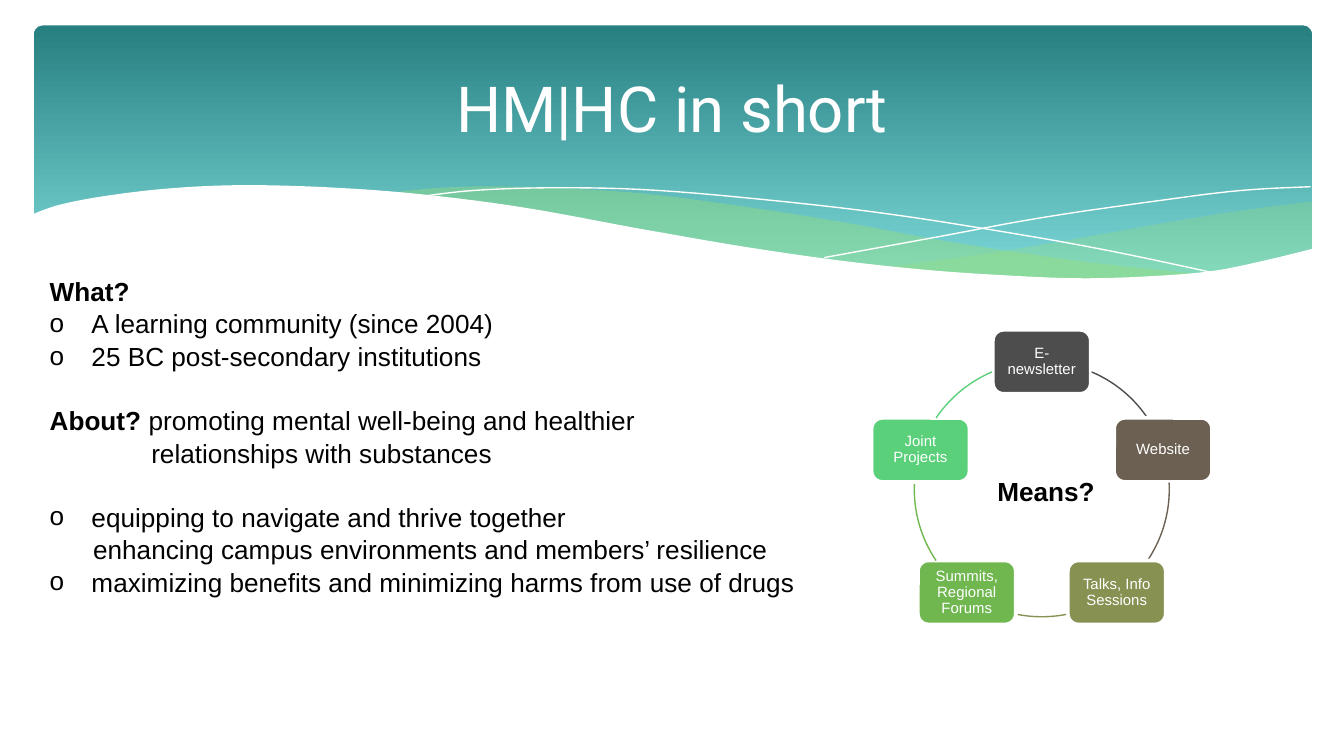
from math import cos, radians, sin
from typing import NamedTuple

from lxml import etree
from pptx import Presentation
from pptx.dml.color import RGBColor
from pptx.enum.shapes import MSO_SHAPE
from pptx.enum.text import MSO_ANCHOR, PP_ALIGN
from pptx.oxml.ns import qn
from pptx.util import Cm, Pt

ROUNDED = MSO_SHAPE.ROUNDED_RECTANGLE
ARC = MSO_SHAPE.ARC
LEFT, CENTER = PP_ALIGN.LEFT, PP_ALIGN.CENTER
TOP, MIDDLE = MSO_ANCHOR.TOP, MSO_ANCHOR.MIDDLE

WHITE = RGBColor(0xFF, 0xFF, 0xFF)
BLACK = RGBColor(0x00, 0x00, 0x00)
TEAL = RGBColor(0x27, 0x7F, 0x80)
AQUA = RGBColor(0x7A, 0xD6, 0xD6)
LIME = RGBColor(0x99, 0xDE, 0x75)
CHARCOAL = RGBColor(0x4D, 0x4D, 0x4D)
BROWN = RGBColor(0x6C, 0x60, 0x52)
OLIVE = RGBColor(0x87, 0x91, 0x52)
GREEN = RGBColor(0x70, 0xB7, 0x50)
MINT = RGBColor(0x5B, 0xD0, 0x7A)

# Curve knots in centimetres from the top left corner of the header band.
RIGHT_WAVE_TOP = [(24.16, 3.33), (22.76, 3.51), (21.23, 3.76), (18.49, 4.24), (16.15, 4.57)]
RIGHT_WAVE_BOTTOM = [(16.15, 4.57), (17.63, 4.7), (19.48, 4.8), (21.06, 4.78),
                     (22.35, 4.65), (23.29, 4.45), (24.16, 4.22)]
LEFT_WAVE_TOP = [(22.05, 4.7), (19.86, 4.47), (17.3, 4.09), (15.34, 3.73), (13.11, 3.38),
                 (11.18, 3.15), (9.02, 3.05), (7.7, 3.07), (6.63, 3.18)]
LEFT_WAVE_BOTTOM = [(6.63, 3.18), (8.56, 3.38), (10.77, 3.73), (12.83, 4.09), (15.06, 4.45),
                    (17.02, 4.67), (19, 4.8), (20.65, 4.8), (22.05, 4.7)]
FALLING_LINE = [(7.21, 3.25), (8.33, 3.12), (9.93, 3.07), (11.79, 3.12), (14.15, 3.33),
                (16.26, 3.58), (18.67, 3.96), (20.47, 4.29), (22.4, 4.7)]
RISING_LINE = [(14.94, 4.39), (17.02, 4.01), (19.08, 3.63), (21.36, 3.3), (22.83, 3.12),
               (24.13, 3.05)]
WHITE_WAVE = [(-0.05, 3.58), (0.53, 3.38), (1.52, 3.2), (2.72, 3.07), (4.06, 3.02),
              (5.72, 3.07), (7.39, 3.2), (9.3, 3.45), (11.43, 3.84), (13.46, 4.19),
              (15.27, 4.45), (16.84, 4.62), (18.26, 4.72), (19.69, 4.78), (20.96, 4.75),
              (22.23, 4.65), (23.24, 4.45), (24.18, 4.22)]
WHITE_WAVE_FOOT = [(24.18, 5.79), (-0.05, 5.79)]

# Label, colour, and start and end angle of the arc to the next node.
MEANS = [
    ("E-newsletter", CHARCOAL, 293, 326),
    ("Website", BROWN, 357, 34),
    ("Talks, Info Sessions", OLIVE, 79, 101),
    ("Summits, Regional Forums", GREEN, 146, 183),
    ("Joint Projects", MINT, 214, 247),
]


class Box(NamedTuple):
    """Left, top, width and height in centimetres."""
    left: float
    top: float
    width: float
    height: float

    def lengths(self):
        return [Cm(value) for value in self]


def smooth(knots, steps=6):
    """Return points on a Catmull-Rom curve through the knots."""
    padded = [knots[0], *knots, knots[-1]]
    points = [knots[0]]
    for a, b, c, d in zip(padded, padded[1:], padded[2:], padded[3:]):
        for step in range(1, steps + 1):
            t = step / steps
            points.append(tuple(
                (2 * q + (r - p) * t + (2 * p - 5 * q + 4 * r - s) * t ** 2
                 + (3 * q - p - 3 * r + s) * t ** 3) / 2
                for p, q, r, s in zip(a, b, c, d)))
    return points


def format_shape(shape, fill=None, line=None, line_width=0.75, opacity=None):
    shape.shadow.inherit = False
    if fill is None:
        shape.fill.background()
    else:
        shape.fill.solid()
        shape.fill.fore_color.rgb = fill
    if opacity is not None:
        color = shape.element.spPr.find(".//" + qn("a:srgbClr"))
        etree.SubElement(color, qn("a:alpha")).set("val", str(opacity * 1000))
    if line is None:
        shape.line.fill.background()
    else:
        shape.line.color.rgb = line
        shape.line.width = Pt(line_width)


def add_curve(slide, box, points, closed=True, **style):
    places = [(Cm(box.left + x), Cm(box.top + y)) for x, y in points]
    builder = slide.shapes.build_freeform(*places[0])
    builder.add_line_segments(places[1:], close=closed)
    format_shape(builder.convert_to_shape(), **style)


def set_frame(frame, inset=(0.25, 0.13), anchor=TOP, wrap=True):
    frame.word_wrap = wrap
    frame.vertical_anchor = anchor
    frame.margin_left = frame.margin_right = Cm(inset[0])
    frame.margin_top = frame.margin_bottom = Cm(inset[1])
    return frame


def write(paragraph, text, size=14, font="Arial", color=BLACK, bold=False, align=LEFT):
    paragraph.alignment = align
    run = paragraph.add_run()
    run.text = text
    run.font.size = Pt(size)
    run.font.name = font
    run.font.bold = bold
    run.font.color.rgb = color


def indent(paragraph, margin, bullet=False):
    properties = paragraph._p.get_or_add_pPr()
    properties.set("marL", str(Cm(margin)))
    properties.set("indent", str(-Cm(margin) if bullet else 0))
    if bullet:
        etree.SubElement(properties, qn("a:buFont")).set("typeface", "Arial")
        etree.SubElement(properties, qn("a:buChar")).set("char", "o")


def add_header(slide, box):
    band = slide.shapes.add_shape(ROUNDED, *box.lengths())
    band.adjustments[0] = 0.034
    format_shape(band)
    band.fill.gradient()
    band.fill.gradient_angle = 270
    for stop, color, position in zip(band.fill.gradient_stops, (TEAL, AQUA), (0, 0.9)):
        stop.color.rgb = color
        stop.position = position

    add_curve(slide, box, smooth(RIGHT_WAVE_TOP) + smooth(RIGHT_WAVE_BOTTOM),
              fill=LIME, opacity=29)
    add_curve(slide, box, smooth(LEFT_WAVE_TOP) + smooth(LEFT_WAVE_BOTTOM),
              fill=LIME, opacity=40)
    for knots in (FALLING_LINE, RISING_LINE):
        add_curve(slide, box, smooth(knots), closed=False, line=WHITE)
    add_curve(slide, box, smooth(WHITE_WAVE) + WHITE_WAVE_FOOT, fill=WHITE)

    title_box = Box(box.left + 0.63, box.top + 0.23, box.width - 1.3, 2.62)
    title = slide.shapes.add_textbox(*title_box.lengths())
    frame = set_frame(title.text_frame, anchor=MIDDLE)
    write(frame.paragraphs[0], "HM|HC in short", size=34, font="Roboto", color=WHITE,
          align=CENTER)


def add_description(slide, box):
    frame = set_frame(slide.shapes.add_textbox(*box.lengths()).text_frame)
    # Bold lead, text, left margin, bullet, gap above in points.
    lines = [
        ("What?", "", 0, False, 0),
        ("", "A learning community (since 2004)", 0.79, True, 0),
        ("", "25 BC post-secondary institutions", 0.79, True, 0),
        ("About?", " promoting mental well-being and healthier", 0, False, 16.8),
        ("", "relationships with substances", 1.92, False, 0),
        ("", "equipping to navigate and thrive together", 0.79, True, 16.8),
        ("", "enhancing campus environments and members’ resilience", 0.82, False, 0),
        ("", "maximizing benefits and minimizing harms from use of drugs", 0.79, True, 0),
    ]
    for index, (lead, text, margin, bullet, gap) in enumerate(lines):
        paragraph = frame.add_paragraph() if index else frame.paragraphs[0]
        paragraph.line_spacing = 1.04
        paragraph.space_before = Pt(gap)
        indent(paragraph, margin, bullet)
        if lead:
            write(paragraph, lead, bold=True)
        if text:
            write(paragraph, text)


def add_means_cycle(slide, box):
    """Place the nodes evenly on the circle that fills the box, with arcs between them."""
    radius = box.width / 2
    center_x, center_y = box.left + radius, box.top + radius
    node_width, node_height = 1.85, 1.21
    for index, (label, color, start, end) in enumerate(MEANS):
        angle = radians(360 / len(MEANS) * index - 90)
        node_box = Box(center_x + radius * cos(angle) - node_width / 2,
                       center_y + radius * sin(angle) - node_height / 2,
                       node_width, node_height)
        node = slide.shapes.add_shape(ROUNDED, *node_box.lengths())
        format_shape(node, fill=color, line=WHITE, line_width=2)
        frame = set_frame(node.text_frame, inset=(0.08, 0.08), anchor=MIDDLE)
        frame.paragraphs[0].line_spacing = 0.9
        write(frame.paragraphs[0], label, size=8, color=WHITE, align=CENTER)

        arc = slide.shapes.add_shape(ARC, *box.lengths())
        arc.adjustments[0], arc.adjustments[1] = start * 0.6, end * 0.6
        format_shape(arc, line=color)

    caption_box = Box(center_x - 1.1, center_y - 0.39, 2.36, 0.86)
    caption = slide.shapes.add_textbox(*caption_box.lengths())
    frame = set_frame(caption.text_frame, wrap=False)
    write(frame.paragraphs[0], "Means?", bold=True, align=CENTER)


def main():
    presentation = Presentation()
    presentation.slide_width, presentation.slide_height = Cm(25.4), Cm(14.29)
    slide = presentation.slides.add_slide(presentation.slide_layouts[6])
    add_header(slide, Box(0.64, 0.48, 24.16, 5.13))
    add_description(slide, Box(0.69, 5.05, 14.8, 6.83))
    add_means_cycle(slide, Box(17.28, 6.84, 4.82, 4.82))
    presentation.save("out.pptx")


if __name__ == "__main__":
    main()
